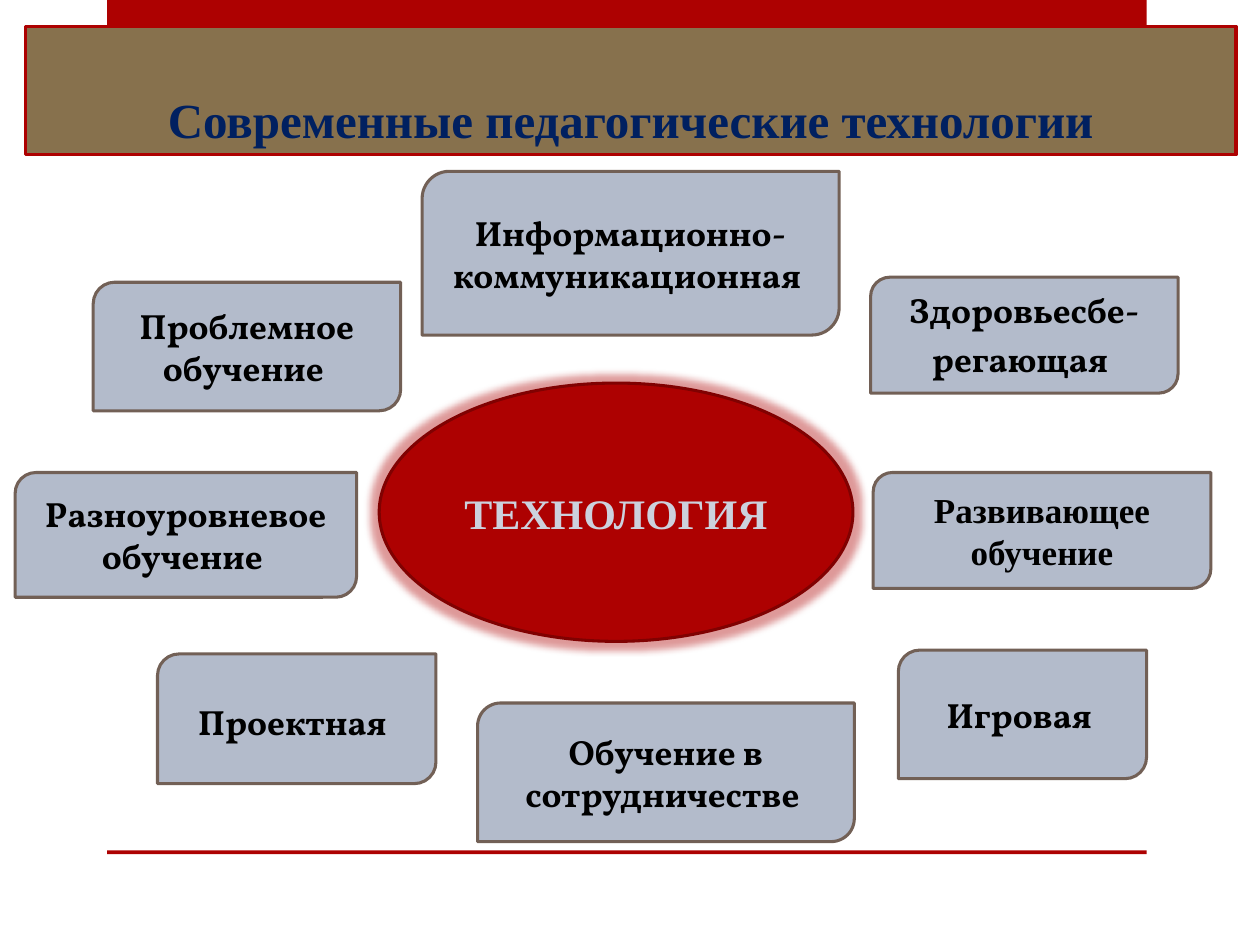
from lxml.etree import SubElement
from pptx import Presentation
from pptx.dml.color import RGBColor
from pptx.enum.shapes import MSO_SHAPE
from pptx.enum.text import MSO_ANCHOR, MSO_AUTO_SIZE, PP_ALIGN
from pptx.oxml.ns import qn
from pptx.util import Inches, Pt

RED = "AD0101"
SERIF = "Times New Roman"
DISPLAY = "Vollkorn"

# Position, label, font and size of the trailing space (None for no space)
TECHNOLOGIES = [
    ((3.35, 1.36, 3.31, 1.3), "Информационно-коммуникационная", DISPLAY, 20),
    ((6.91, 2.2, 2.44, 0.92), "Здоровьесбе-регающая", DISPLAY, 24),
    ((0.12, 3.75, 2.71, 0.99), "Разноуровневое обучение", DISPLAY, 20),
    ((7.13, 5.16, 1.97, 1.02), "Игровая", DISPLAY, 18),
    ((3.79, 5.58, 2.99, 1.1), "Обучение в сотрудничестве", DISPLAY, 20),
    ((1.25, 5.19, 2.21, 1.03), "Проектная", DISPLAY, 24),
    ((0.74, 2.24, 2.44, 1.02), "Проблемное обучение", DISPLAY, 20),
    ((6.93, 3.75, 2.68, 0.92), "Развивающее\nобучение", SERIF, None),
]


def color(value):
    """Turn a hex string into a colour."""
    return RGBColor.from_string(value)


def paint(shape, fill, line=None):
    """Give a shape a solid fill and an optional outline."""
    shape.shadow.inherit = False
    shape.fill.solid()
    shape.fill.fore_color.rgb = color(fill)
    if line:
        shape.line.color.rgb = color(line)
        shape.line.width = Pt(1.75)
    else:
        shape.line.fill.background()


def add_figure(slide, kind, place, fill, line=None):
    """Add a painted preset shape."""
    shape = slide.shapes.add_shape(kind, *map(Inches, place))
    paint(shape, fill, line)
    return shape


def format_span(span, font, size, hex_color, bold=True):
    """Set the font of one run."""
    span.font.name = font
    span.font.size = Pt(size)
    span.font.bold = bold
    span.font.color.rgb = color(hex_color)


def write(shape, text, font, size, hex_color, anchor=MSO_ANCHOR.MIDDLE):
    """Put centred bold text into a shape."""
    frame = shape.text_frame
    frame.text = text
    frame.word_wrap = True
    frame.auto_size = MSO_AUTO_SIZE.NONE
    frame.vertical_anchor = anchor
    for para in frame.paragraphs:
        para.alignment = PP_ALIGN.CENTER
        for span in para.runs:
            format_span(span, font, size, hex_color)


def add_technology(slide, place, text, font, space_size):
    """Add a card that names one technology."""
    box = add_figure(slide, MSO_SHAPE.ROUND_2_DIAG_RECTANGLE, place, "B3BBCB", "726056")
    write(box, text, font, 20, "000000")
    if space_size:
        span = box.text_frame.paragraphs[-1].add_run()
        span.text = " "
        format_span(span, font, space_size, "000000", space_size < 24)


def add_glow(shape, hex_color, radius, opacity):
    """Surround a shape with a soft glow."""
    effects = shape._element.spPr.find(qn("a:effectLst"))
    glow = SubElement(effects, qn("a:glow"), rad=str(Inches(radius)))
    tint = SubElement(glow, qn("a:srgbClr"), val=hex_color)
    SubElement(tint, qn("a:alpha"), val=str(opacity * 1000))


def add_center(slide):
    """Add the glowing ellipse in the middle."""
    ellipse = add_figure(slide, MSO_SHAPE.OVAL, (3.01, 3.04, 3.76, 2.05), RED, "800101")
    add_glow(ellipse, RED, 0.11, 40)
    write(ellipse, "ТЕХНОЛОГИЯ", SERIF, 24, "CCD1DD")


def set_title(slide, text):
    """Shape the title placeholder as a scroll in front of the bar."""
    title = slide.shapes.title
    title.left, title.top, title.width, title.height = map(Inches, (0.2, 0.21, 9.61, 1.02))
    geometry = SubElement(title._element.spPr, qn("a:prstGeom"), prst="horizontalScroll")
    SubElement(geometry, qn("a:avLst"))
    paint(title, "87714D", RED)
    write(title, text, SERIF, 28, "002060", MSO_ANCHOR.BOTTOM)
    title._element.getparent().append(title._element)


def main():
    """Build and save the slide."""
    deck = Presentation()
    deck.slide_width, deck.slide_height = Inches(10), Inches(7.5)
    slide = deck.slides.add_slide(deck.slide_layouts[5])
    for top, height in ((0, 0.42), (6.75, 0.03)):
        add_figure(slide, MSO_SHAPE.RECTANGLE, (0.85, top, 8.25, height), RED)
    for technology in TECHNOLOGIES:
        add_technology(slide, *technology)
    add_center(slide)
    set_title(slide, "Современные педагогические технологии")
    deck.save("out.pptx")


if __name__ == "__main__":
    main()
